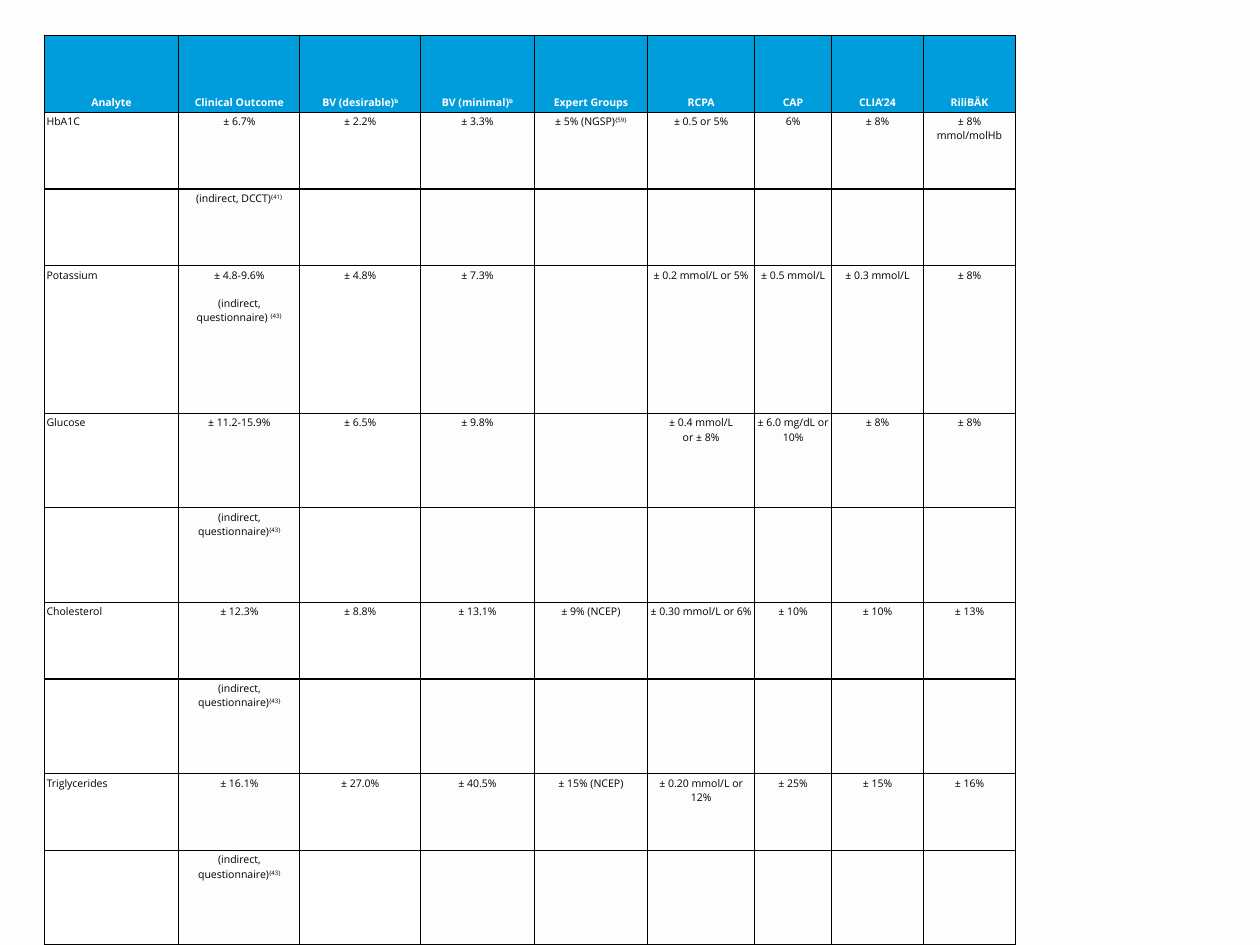
"""Builds a slide with a table of allowable error limits for five analytes."""
from pptx import Presentation
from pptx.dml.color import RGBColor
from pptx.enum.text import MSO_ANCHOR, PP_ALIGN
from pptx.oxml.ns import qn
from pptx.util import Inches, Pt
from lxml.etree import SubElement

BLUE = RGBColor(0x00, 0x9D, 0xDC)
WHITE = RGBColor(0xFF, 0xFF, 0xFF)
BLACK = RGBColor(0x00, 0x00, 0x00)
PAPER = RGBColor(0xFD, 0xFD, 0xFD)
NO_STYLE = "{2D5ABB26-0587-4C30-8999-92F81FD0307C}"

COLS = [1.07, 0.96, 0.96, 0.9, 0.9, 0.85, 0.61, 0.73, 0.73]
HEIGHTS = [0.61, 0.61, 0.61, 1.17, 0.75, 0.75, 0.61, 0.75, 0.61, 0.75]
ROWS = [
    ["Analyte", "Clinical Outcome", "BV (desirable)^b", "BV (minimal)^b",
     "Expert Groups", "RCPA", "CAP", "CLIA’24", "RiliBÄK"],
    ["HbA1C", "± 6.7%", "± 2.2%", "± 3.3%", "± 5% (NGSP)^{59}",
     "± 0.5 or 5%", "6%", "± 8%", "± 8% mmol/molHb"],
    ["", "(indirect, DCCT)^{41}"],
    ["Potassium", "± 4.8-9.6%\n(indirect, questionnaire) ^{43}", "± 4.8%", "± 7.3%", "",
     "± 0.2 mmol/L or 5%", "± 0.5 mmol/L", "± 0.3 mmol/L", "± 8%"],
    ["Glucose", "± 11.2-15.9%", "± 6.5%", "± 9.8%", "",
     "± 0.4 mmol/L\nor ± 8%", "± 6.0 mg/dL or 10%", "± 8%", "± 8%"],
    ["", "(indirect, questionnaire)^{43}"],
    ["Cholesterol", "± 12.3%", "± 8.8%", "± 13.1%", "± 9% (NCEP)",
     "± 0.30 mmol/L or 6%", "± 10%", "± 10%", "± 13%"],
    ["", "(indirect, questionnaire)^{43}"],
    ["Triglycerides", "± 16.1%", "± 27.0%", "± 40.5%", "± 15% (NCEP)",
     "± 0.20 mmol/L or 12%", "± 25%", "± 15%", "± 16%"],
    ["", "(indirect, questionnaire)^{43}"],
]


def add_borders(cell, sides):
    tcPr = cell._tc.get_or_add_tcPr()
    for side in sides:
        ln = SubElement(tcPr, qn(f"a:ln{side}"), w=str(Pt(0.75)))
        fill = SubElement(ln, qn("a:solidFill"))
        SubElement(fill, qn("a:srgbClr"), val=str(BLACK))


def write_cell(cell, text, header, align):
    tf = cell.text_frame
    for i, line in enumerate(text.split("\n")):
        p = tf.paragraphs[0] if i == 0 else tf.add_paragraph()
        p.alignment = align
        if line.startswith("(") and i:
            p.space_before = Pt(8)
        for j, part in enumerate(line.split("^")):
            r = p.add_run()
            r.text = part
            r.font.name = "Open Sans"
            r.font.size = Pt(6)
            r.font.bold = header
            r.font.color.rgb = WHITE if header else BLACK
            if j:
                r.font._element.set("baseline", "30000")


prs = Presentation()
prs.slide_width, prs.slide_height = Inches(10), Inches(7.5)
s = prs.slides.add_slide(prs.slide_layouts[6])
s.background.fill.solid()
s.background.fill.fore_color.rgb = PAPER

frame = s.shapes.add_table(len(HEIGHTS), len(COLS), Inches(0.35), Inches(0.28),
                           Inches(sum(COLS)), Inches(sum(HEIGHTS)))
table = frame.table
table.first_row = table.horz_banding = False
table._tbl.tblPr.find(qn("a:tableStyleId")).text = NO_STYLE
for col, width in zip(table.columns, COLS):
    col.width = Inches(width)
for row, height in zip(table.rows, HEIGHTS):
    row.height = Inches(height)

for i, texts in enumerate(ROWS):
    header = i == 0
    continued = not texts[0]
    has_continuation = i + 1 < len(ROWS) and not ROWS[i + 1][0]
    sides = ["L", "R"] + ["T"] * (not continued) + ["B"] * (not has_continuation)
    for j in range(len(COLS)):
        cell = table.cell(i, j)
        cell.margin_left = cell.margin_right = Inches(0.02)
        cell.margin_top = cell.margin_bottom = Inches(0.02)
        cell.vertical_anchor = MSO_ANCHOR.BOTTOM if header else MSO_ANCHOR.TOP
        add_borders(cell, sides)
        if header or j in (0, 2):
            cell.fill.solid()
            cell.fill.fore_color.rgb = BLUE if header else WHITE
        else:
            cell.fill.background()
        if j < len(texts) and texts[j]:
            align = PP_ALIGN.LEFT if j == 0 and not header else PP_ALIGN.CENTER
            write_cell(cell, texts[j], header, align)

prs.save("out.pptx")
